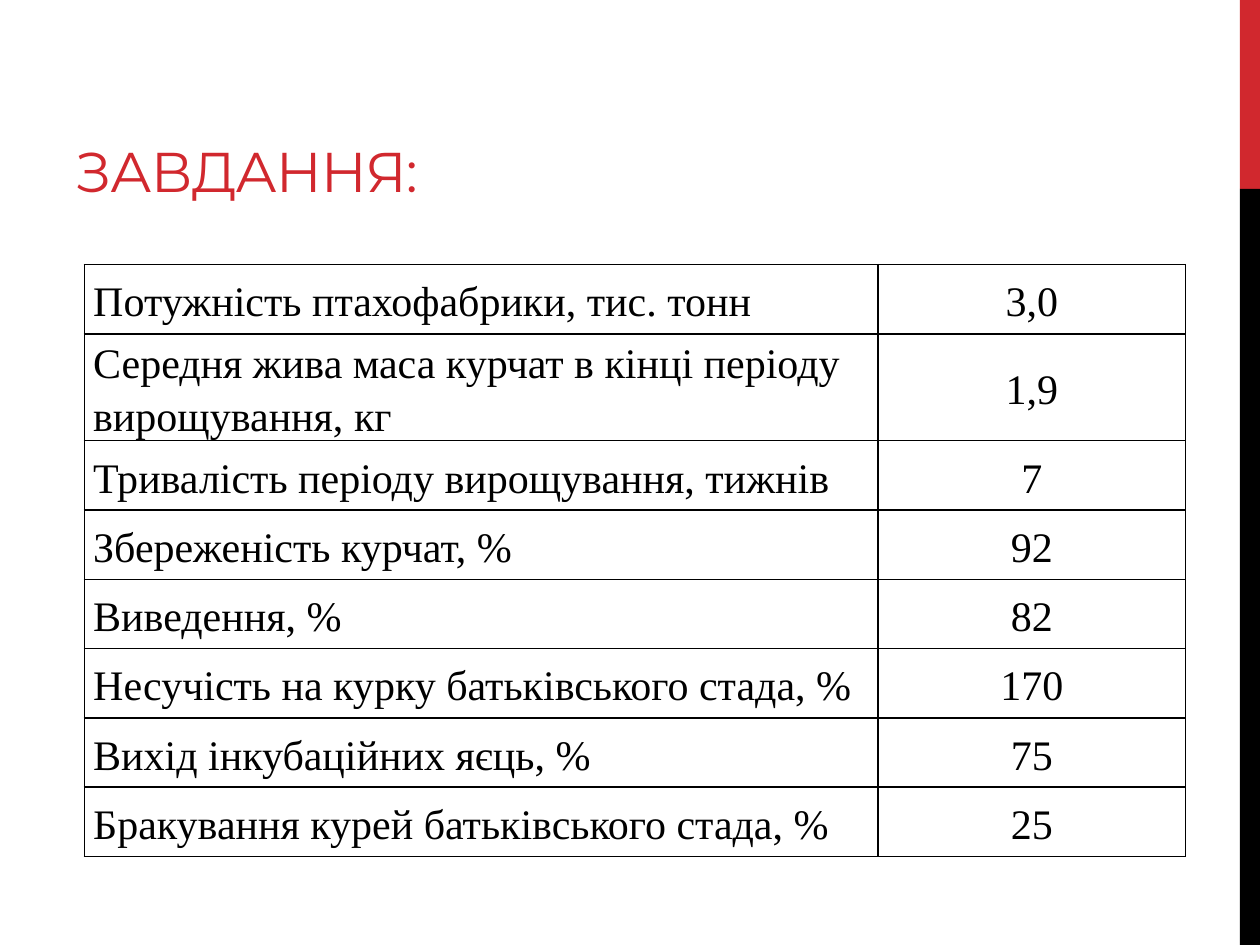
from dataclasses import dataclass

from lxml.etree import SubElement
from pptx import Presentation
from pptx.dml.color import RGBColor
from pptx.enum.shapes import MSO_SHAPE
from pptx.enum.text import MSO_ANCHOR as Anchor, PP_ALIGN as Align
from pptx.oxml.ns import qn
from pptx.util import Inches, Pt


@dataclass(frozen=True)
class Theme:
    accent: str = "D1282E"
    ink: str = "000000"
    title_font: str = "Montserrat"
    table_font: str = "Times New Roman"
    title_size: int = 32
    table_size: int = 24
    border_width: int = 1


TASK_ROWS = [
    ("Потужність птахофабрики, тис. тонн", "3,0"),
    ("Середня жива маса курчат в кінці періоду вирощування, кг", "1,9"),
    ("Тривалість періоду вирощування, тижнів", "7"),
    ("Збереженість курчат, %", "92"),
    ("Виведення, %", "82"),
    ("Несучість на курку батьківського стада, %", "170"),
    ("Вихід інкубаційних яєць, %", "75"),
    ("Бракування курей батьківського стада, %", "25"),
]
COLUMN_WIDTHS = (6.3, 2.44)
ROW_HEIGHT = 0.55
TALL_ROWS = {1: 0.71}


class SlideBuilder:
    def __init__(self, slide, theme):
        self.slide = slide
        self.theme = theme

    def style_run(self, run, font_name, size, color):
        run.font.name = font_name
        run.font.size = Pt(size)
        run.font.color.rgb = RGBColor.from_string(color)

    def bar(self, left, top, width, height, color):
        shape = self.slide.shapes.add_shape(
            MSO_SHAPE.RECTANGLE, Inches(left), Inches(top), Inches(width), Inches(height))
        shape.shadow.inherit = False
        shape.fill.solid()
        shape.fill.fore_color.rgb = RGBColor.from_string(color)
        shape.line.fill.background()

    def title(self, text, left, top, width, height):
        shape = self.slide.shapes.title
        shape.left, shape.top = Inches(left), Inches(top)
        shape.width, shape.height = Inches(width), Inches(height)
        frame = shape.text_frame
        frame.text = text
        frame.word_wrap = True
        frame.vertical_anchor = Anchor.BOTTOM
        paragraph = frame.paragraphs[0]
        paragraph.alignment = Align.LEFT
        run = paragraph.runs[0]
        self.style_run(run, self.theme.title_font, self.theme.title_size, self.theme.accent)
        run.font._element.set("spc", "-60")

    def table(self, rows, left, top):
        heights = [TALL_ROWS.get(index, ROW_HEIGHT) for index in range(len(rows))]
        table = self.slide.shapes.add_table(
            len(rows), len(COLUMN_WIDTHS), Inches(left), Inches(top),
            Inches(sum(COLUMN_WIDTHS)), Inches(sum(heights))).table
        table.first_row = table.horz_banding = False
        for column, width in zip(table.columns, COLUMN_WIDTHS):
            column.width = Inches(width)
        for row, height, texts in zip(table.rows, heights, rows):
            row.height = Inches(height)
            for cell, text, alignment in zip(row.cells, texts, (Align.LEFT, Align.CENTER)):
                self.cell(cell, text, alignment)

    def cell(self, cell, text, alignment):
        cell.text_frame.text = text
        cell.vertical_anchor = Anchor.MIDDLE
        cell.margin_left = cell.margin_right = Inches(0.07)
        cell.margin_top = cell.margin_bottom = 0
        paragraph = cell.text_frame.paragraphs[0]
        paragraph.alignment = alignment
        paragraph.line_spacing = 1.15
        self.style_run(paragraph.runs[0], self.theme.table_font,
                       self.theme.table_size, self.theme.ink)
        self.borders(cell)
        cell.fill.background()

    def borders(self, cell):
        properties = cell._tc.get_or_add_tcPr()
        for side in ("a:lnL", "a:lnR", "a:lnT", "a:lnB"):
            line = SubElement(properties, qn(side), w=str(Pt(self.theme.border_width)))
            fill = SubElement(line, qn("a:solidFill"))
            SubElement(fill, qn("a:srgbClr"), val=self.theme.ink)


def main():
    presentation = Presentation()
    presentation.slide_width, presentation.slide_height = Inches(10), Inches(7.5)
    title_only = presentation.slide_layouts[5]
    theme = Theme()
    builder = SlideBuilder(presentation.slides.add_slide(title_only), theme)
    builder.bar(9.84, 0, 0.16, 1.5, theme.accent)
    builder.bar(9.84, 1.5, 0.16, 6, theme.ink)
    builder.title("ЗАВДАННЯ:", 0.5, 0.17, 6.33, 1.5)
    builder.table(TASK_ROWS, 0.67, 2.1)
    presentation.save("out.pptx")


if __name__ == "__main__":
    main()
